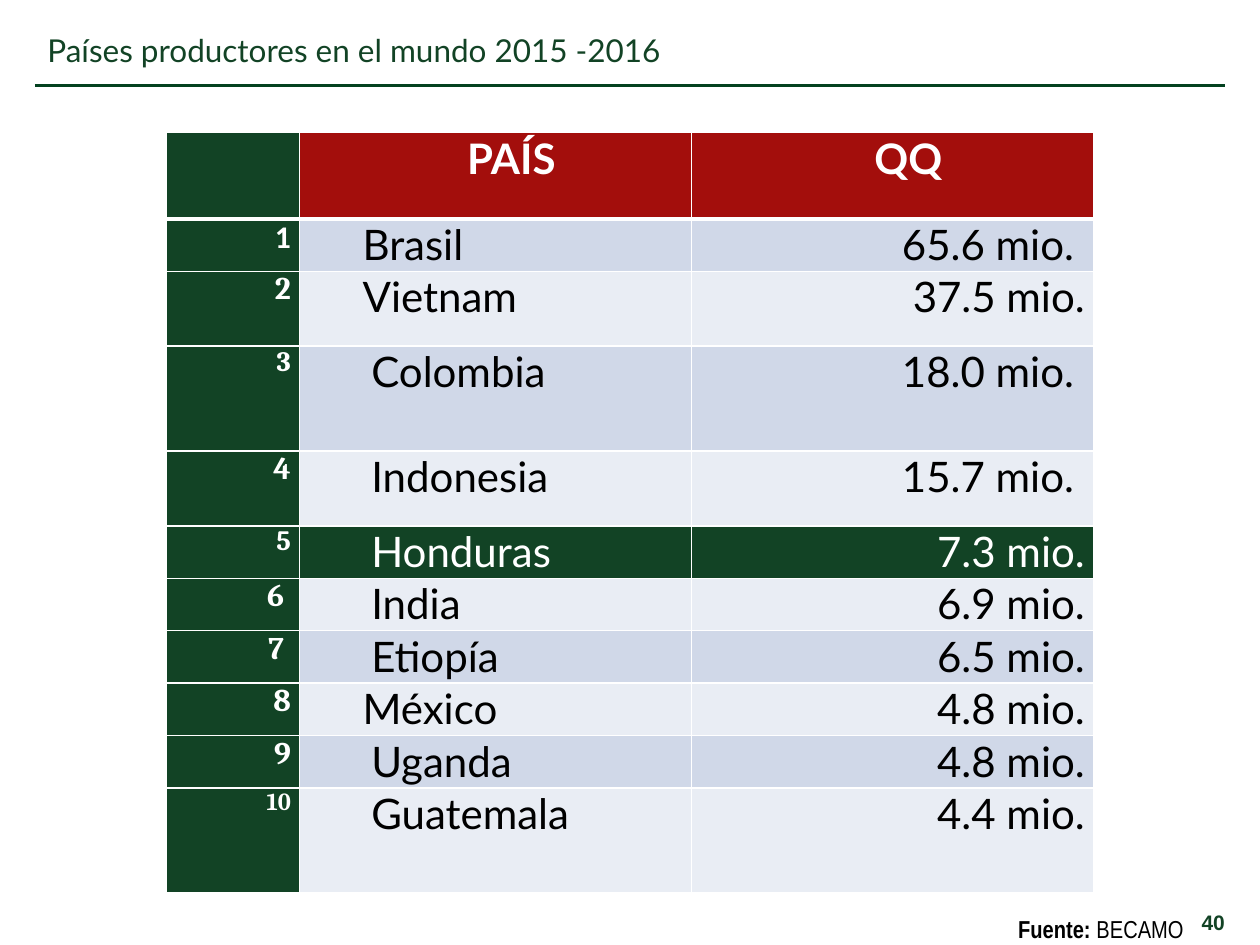
"""Build the slide that ranks the producing countries of 2015 -2016."""
import lxml.etree
import pptx
import pptx.dml.color
import pptx.enum.shapes
import pptx.enum.text
import pptx.oxml.ns
import pptx.util

Pt = pptx.util.Pt
Align = pptx.enum.text.PP_ALIGN
Anchor = pptx.enum.text.MSO_ANCHOR
qn = pptx.oxml.ns.qn

HUES = {
    "green": "124325", "rule": "03411F", "red": "A30E0C", "white": "FFFFFF",
    "black": "000000", "odd": "D0D8E8", "even": "E9EDF4",
}
COLS = [76, 224, 229.7]
ROWS = [49.3, 30, 42.7, 60, 42.7, 30, 30, 30, 30, 30, 60]
DATA = [
    ("1", 18, "Brasil", 31, "65.6 mio. "),
    ("2", 18, "Vietnam", 31, "37.5 mio."),
    ("3", 16, "Colombia", 36, "18.0 mio. "),
    ("4", 18, "Indonesia", 36, "15.7 mio. "),
    ("5", 16, "Honduras", 36, "7.3 mio."),
    ("6 ", 18, "India", 36, "6.9 mio."),
    ("7 ", 18, "Etiopía", 36, "6.5 mio."),
    ("8", 18, "México", 31, "4.8 mio."),
    ("9", 18, "Uganda", 36, "4.8 mio."),
    ("10", 14, "Guatemala", 36, "4.4 mio."),
]


def color(name):
    """Return the named colour."""
    return pptx.dml.color.RGBColor.from_string(HUES[name])


def write(para, text, size=24, face="Lato", hue="black", bold=False,
          align=Align.LEFT, indent=0):
    """Add a formatted run to a paragraph."""
    para.alignment = align
    if indent:
        props = para._p.get_or_add_pPr()
        props.set("marL", str(Pt(indent)))
        props.set("indent", "0")
    run = para.add_run()
    run.text = text
    run.font.size = Pt(size)
    run.font.name = face
    run.font.bold = bold
    run.font.color.rgb = color(hue)


class Deck:
    """Hold the style and the current slide."""

    def __init__(self):
        """Open a deck with one blank slide."""
        self.show = pptx.Presentation()
        self.show.slide_width = Pt(720)
        self.show.slide_height = Pt(540)
        self.slide = self.show.slides.add_slide(self.show.slide_layouts[6])

    def rule(self, left, right, top):
        """Draw a level line."""
        line = self.slide.shapes.add_connector(
            pptx.enum.shapes.MSO_CONNECTOR.STRAIGHT,
            Pt(left), Pt(top), Pt(right), Pt(top))
        line.line.color.rgb = color("rule")
        line.line.width = Pt(2)
        lxml.etree.SubElement(line._element.spPr, qn("a:effectLst"))

    def label(self, box, runs, anchor=Anchor.MIDDLE, **style):
        """Place a text box with one paragraph of (text, bold) runs."""
        frame = self.slide.shapes.add_textbox(*map(Pt, box)).text_frame
        frame.word_wrap = True
        frame.vertical_anchor = anchor
        for text, bold in runs:
            write(frame.paragraphs[0], text, bold=bold, **style)

    def grid(self, left, top, cols, rows):
        """Add a plain table with the given column and row sizes."""
        table = self.slide.shapes.add_table(
            len(rows), len(cols), Pt(left), Pt(top),
            Pt(sum(cols)), Pt(sum(rows))).table
        table.first_row = table.horz_banding = False
        for col, width in zip(table.columns, cols):
            col.width = Pt(width)
        for row, height in zip(table.rows, rows):
            row.height = Pt(height)
        return table

    def cell(self, table, row, col, fill, text="", **style):
        """Fill, edge and write one cell."""
        cell = table.cell(row, col)
        cell.margin_left = cell.margin_right = Pt(5)
        cell.margin_top = cell.margin_bottom = 0
        props = cell._tc.get_or_add_tcPr()
        heavy = {0: "lnB", 1: "lnT"}.get(row)
        for side in ("lnL", "lnR", "lnT", "lnB"):
            edge = lxml.etree.SubElement(props, qn("a:" + side))
            edge.set("w", str(Pt(3 if side == heavy else 1)))
            solid = lxml.etree.SubElement(edge, qn("a:solidFill"))
            lxml.etree.SubElement(
                solid, qn("a:srgbClr")).set("val", HUES["white"])
        cell.fill.solid()
        cell.fill.fore_color.rgb = color(fill)
        if text:
            write(cell.text_frame.paragraphs[0], text, **style)


def main():
    """Lay out the slide and save it."""
    deck = Deck()
    deck.rule(20, 700, 49)
    deck.label((20, 15, 613, 27),
               [("Países productores en el mundo 2015 -2016", False)],
               size=18, hue="green")
    deck.label((659.5, 518.5, 47.5, 17), [("40", True)],
               size=12, face="Arial", hue="green", align=Align.RIGHT)

    table = deck.grid(95.2, 75.8, COLS, ROWS)
    deck.cell(table, 0, 0, "green")
    for col, head in enumerate(("PAÍS", "QQ"), 1):
        deck.cell(table, 0, col, "red", head, hue="white", bold=True,
                  align=Align.CENTER, indent=18)
    for row, (rank, size, land, indent, total) in enumerate(DATA, 1):
        home = land == "Honduras"
        fill = "green" if home else "odd" if row % 2 else "even"
        hue = "white" if home else "black"
        face = "Calibri" if row == 1 else "Cambria"
        deck.cell(table, row, 0, "green", rank, size=size, face=face,
                  hue="white", bold=True, align=Align.RIGHT)
        deck.cell(table, row, 1, fill, land, hue=hue,
                  align=Align.JUSTIFY, indent=indent)
        deck.cell(table, row, 2, fill, total, hue=hue, align=Align.RIGHT)

    deck.label((530.5, 518.5, 153, 24.5),
               [("Fuente:", True), (" BECAMO", False)], anchor=Anchor.TOP,
               size=14, face="Arial Narrow", align=Align.RIGHT)
    deck.show.save("out.pptx")


if __name__ == "__main__":
    main()
